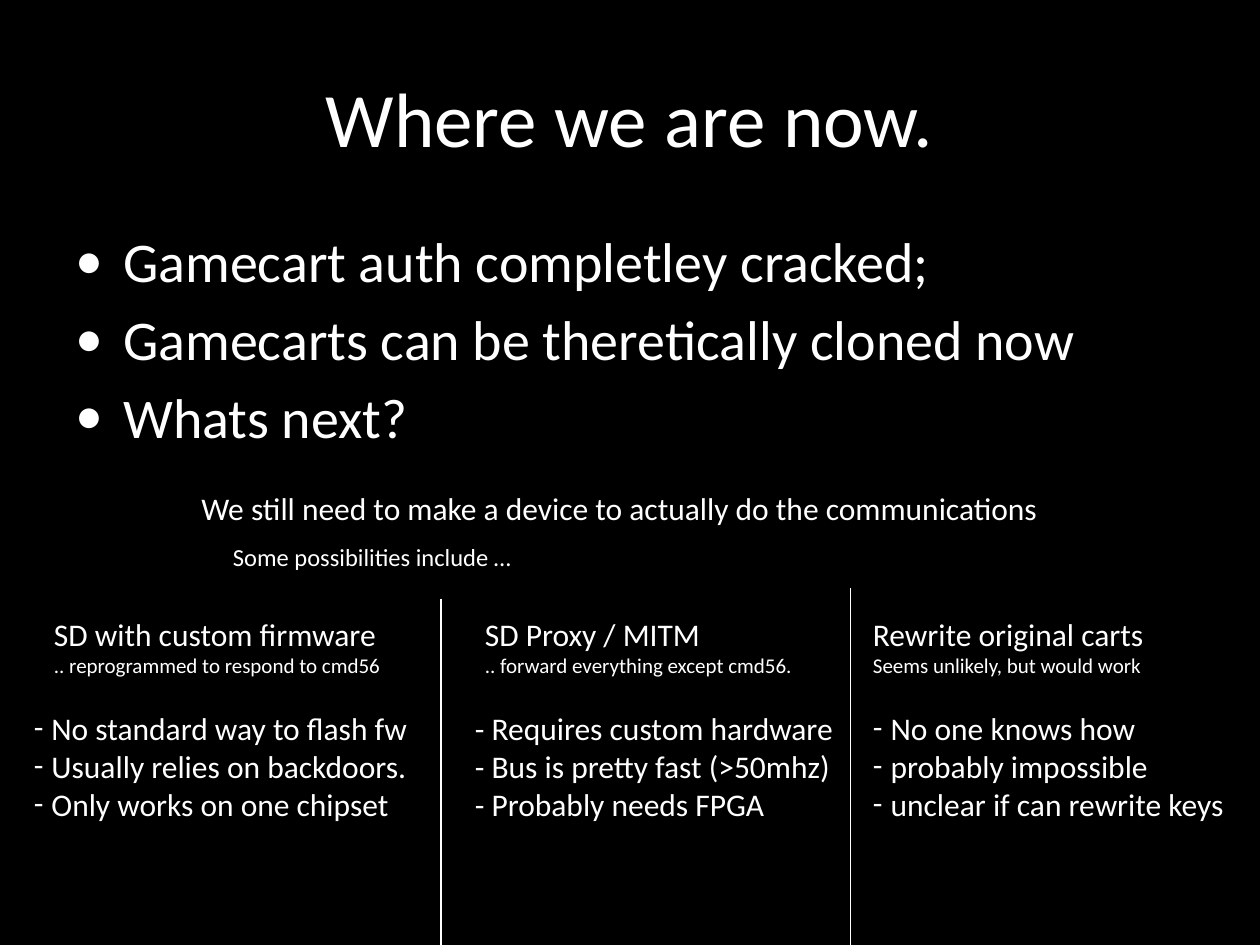
from lxml import etree
from pptx import Presentation
from pptx.dml.color import RGBColor
from pptx.enum.shapes import MSO_CONNECTOR
from pptx.enum.text import MSO_ANCHOR, PP_ALIGN
from pptx.oxml.ns import qn
from pptx.util import Inches, Pt

STRAIGHT = MSO_CONNECTOR.STRAIGHT
TOP, MIDDLE = MSO_ANCHOR.TOP, MSO_ANCHOR.MIDDLE
LEFT, CENTER = PP_ALIGN.LEFT, PP_ALIGN.CENTER

FONT = "Calibri"
COLORS = {"background": "000000", "foreground": "FFFFFF"}

OPTIONS = [
    {
        "heading": ("SD with custom firmware", ".. reprogrammed to respond to cmd56"),
        "heading_at": (0.33, 2.82),
        "points": ("No standard way to flash fw", "Usually relies on backdoors.",
                   "Only works on one chipset"),
        "points_at": (0.17, 3.24),
        "bullet": "-",
    },
    {
        "heading": ("SD Proxy / MITM", ".. forward everything except cmd56."),
        "heading_at": (3.75, 2.69),
        "points": ("- Requires custom hardware", "- Bus is pretty fast (>50mhz)",
                   "- Probably needs FPGA"),
        "points_at": (3.67, 3.08),
        "bullet": None,
    },
    {
        "heading": ("Rewrite original carts", "Seems unlikely, but would work"),
        "heading_at": (6.83, 2.37),
        "points": ("No one knows how", "probably impossible", "unclear if can rewrite keys"),
        "points_at": (6.83, 3.08),
        "bullet": "-",
    },
]


def color(name):
    """Return the named palette colour."""
    return RGBColor.from_string(COLORS[name])


def set_bullet(p, char, indent):
    """Give a paragraph a bullet character with a hanging indent."""
    pPr = p._p.get_or_add_pPr()
    pPr.set("marL", str(Inches(indent)))
    pPr.set("indent", str(-Inches(indent)))
    etree.SubElement(pPr, qn("a:buFont")).set("typeface", FONT)
    etree.SubElement(pPr, qn("a:buChar")).set("char", char)


def add_text(s, lines, left, top, width, height, sizes=(18,), align=LEFT, anchor=TOP,
             bullet=None, indent=0.14, gap=0, wrap=False):
    """Add a text box with one paragraph per line; the last size covers later lines."""
    box = s.shapes.add_textbox(Inches(left), Inches(top), Inches(width), Inches(height))
    tf = box.text_frame
    tf.word_wrap = wrap
    tf.vertical_anchor = anchor
    for i, line in enumerate(lines):
        p = tf.add_paragraph() if i else tf.paragraphs[0]
        p.alignment = align
        if i and gap:
            p.space_before = Pt(gap)
        if bullet:
            set_bullet(p, bullet, indent)
        r = p.add_run()
        r.text = line
        r.font.name = FONT
        r.font.size = Pt(sizes[min(i, len(sizes) - 1)])
        r.font.color.rgb = color("foreground")


def add_divider(s, x, top, bottom):
    """Add a thin vertical line between two columns."""
    line = s.shapes.add_connector(STRAIGHT, Inches(x), Inches(top), Inches(x), Inches(bottom))
    line.line.color.rgb = color("foreground")
    line.line.width = Pt(0.75)
    etree.SubElement(line._element.spPr, qn("a:effectLst"))


def add_option(s, option):
    """Add one column: a heading with its remark, and the points below."""
    left, width = option["heading_at"]
    add_text(s, option["heading"], left, 4.83, width, 0.61, sizes=(18, 12))
    left, width = option["points_at"]
    add_text(s, option["points"], left, 5.58, width, 1.01, bullet=option["bullet"])


def main():
    """Build the slide and save it."""
    prs = Presentation()
    prs.slide_width, prs.slide_height = Inches(10), Inches(7.5)
    s = prs.slides.add_slide(prs.slide_layouts[6])
    s.background.fill.solid()
    s.background.fill.fore_color.rgb = color("background")

    add_text(s, ["Where we are now."], 0.5, 0.3, 9, 1.25, sizes=(44,), align=CENTER,
             anchor=MIDDLE, wrap=True)
    add_text(s, ["Gamecart auth completley cracked;", "Gamecarts can be theretically cloned now",
                 "Whats next?"],
             0.5, 1.75, 9, 2.08, sizes=(32,), bullet="•", indent=0.38, gap=6, wrap=True)
    add_text(s, ["We still need to make a device to actually do the communications"],
             1.5, 3.83, 6.95, 0.4)
    add_text(s, ["Some possibilities include …"], 1.75, 4.25, 2.44, 0.34, sizes=(14,))

    for option in OPTIONS:
        add_option(s, option)
    for x, top in ((3.5, 4.75), (6.75, 4.67)):
        add_divider(s, x, top, 7.5)

    prs.save("out.pptx")


if __name__ == "__main__":
    main()
